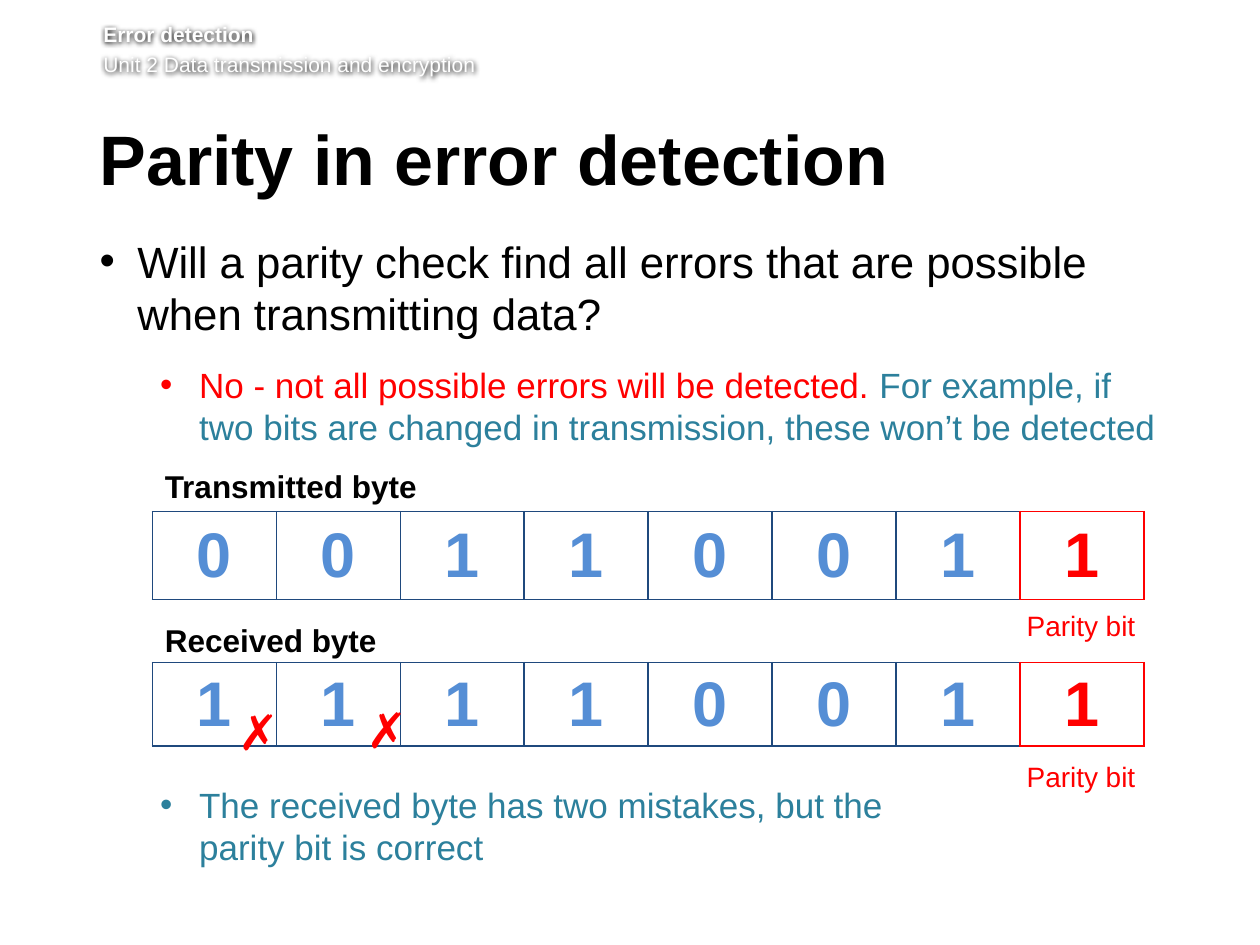
from lxml.etree import SubElement
from pptx import Presentation
from pptx.dml.color import RGBColor
from pptx.enum.text import MSO_ANCHOR, MSO_AUTO_SIZE, PP_ALIGN
from pptx.oxml import parse_xml
from pptx.oxml.ns import nsdecls, qn
from pptx.util import Inches, Pt

BLACK, WHITE, RED = "000000", "FFFFFF", "FF0000"
NAVY, BLUE, TEAL = "1F497D", "558ED5", "2C809C"


def color(hex_value):
    return RGBColor.from_string(hex_value)


def add_run(paragraph, text, size, hex_value, bold=False):
    for index, line in enumerate(text.split("\n")):
        if index:
            paragraph.add_line_break()
        run = paragraph.add_run()
        run.text = line
        run.font.color.rgb = color(hex_value)
        for name, value in {"name": "Arial", "size": Pt(size), "bold": bold}.items():
            setattr(run.font, name, value)


def format_paragraph(paragraph, **values):
    for name, value in values.items():
        setattr(paragraph, name, value)


def prepare_frame(frame, **margins):
    frame.word_wrap = True
    frame.auto_size = MSO_AUTO_SIZE.NONE
    frame.vertical_anchor = MSO_ANCHOR.TOP
    for side, value in margins.items():
        setattr(frame, f"margin_{side}", Inches(value))


def place(shape, *box):
    for name, value in zip(("left", "top", "width", "height"), box):
        setattr(shape, name, Inches(value))


def add_label(slide, text, box, size, hex_value, bold=False, align=PP_ALIGN.LEFT):
    label = slide.shapes.add_textbox(*map(Inches, box))
    prepare_frame(label.text_frame)
    paragraph = label.text_frame.paragraphs[0]
    paragraph.alignment = align
    add_run(paragraph, text, size, hex_value, bold)


def add_header(slide):
    header = slide.shapes.add_textbox(*map(Inches, (0.82, 0.17, 8.82, 0.49)))
    frame = header.text_frame
    prepare_frame(frame, left=0, top=0, right=0, bottom=0.05)
    add_run(frame.paragraphs[0], "Error detection", 12, WHITE, True)
    unit = frame.add_paragraph()
    unit.space_before = Pt(2.9)
    add_run(unit, "Unit 2 Data transmission and encryption", 12, WHITE)
    # Soft shadow that keeps the white text readable
    header._element.spPr.append(parse_xml(
        f'<a:effectLst {nsdecls("a")}><a:outerShdw blurRad="38100" dist="0" dir="0">'
        '<a:srgbClr val="000000"/></a:outerShdw></a:effectLst>'))


def add_bullet(paragraph, level, margin, hanging, runs, size, **spacing):
    format_paragraph(paragraph, level=level, line_spacing=Pt(size * 1.2), **spacing)
    props = paragraph._p.get_or_add_pPr()
    props.set("marL", str(Inches(margin)))
    props.set("indent", str(-Inches(hanging)))
    SubElement(props, qn("a:buFont"), typeface="Arial")
    SubElement(props, qn("a:buChar"), char="•")
    for text, hex_value in runs:
        add_run(paragraph, text, size, hex_value)


def set_borders(cell, left, right, top, bottom):
    props = cell._tc.get_or_add_tcPr()
    for index, (side, hex_value) in enumerate(zip("LRTB", (left, right, top, bottom))):
        props.insert(index, parse_xml(
            f'<a:ln{side} {nsdecls("a")} w="{Pt(1)}"><a:solidFill>'
            f'<a:srgbClr val="{hex_value}"/></a:solidFill></a:ln{side}>'))


def add_byte(slide, bits, top, height):
    frame = slide.shapes.add_table(1, len(bits), Inches(1.21), Inches(top),
                                   Inches(7.87), Inches(height))
    table = frame.table
    table.first_row = table.horz_banding = False
    parity = len(bits) - 1
    for index, bit in enumerate(bits):
        cell = table.cell(0, index)
        cell.fill.background()
        cell.vertical_anchor = MSO_ANCHOR.MIDDLE
        paragraph = cell.text_frame.paragraphs[0]
        paragraph.alignment = PP_ALIGN.CENTER
        add_run(paragraph, bit, 36, RED if index == parity else BLUE, True)
        edge = RED if index == parity else NAVY
        right = RED if index >= parity - 1 else NAVY
        set_borders(cell, edge, right, edge, edge)


def main():
    deck = Presentation()
    deck.slide_width, deck.slide_height = Inches(10), Inches(7.5)
    slide = deck.slides.add_slide(deck.slide_layouts[1])
    add_header(slide)

    # Title
    title = slide.shapes.title
    place(title, 0.79, 0.99, 8.55, 0.73)
    prepare_frame(title.text_frame, left=0, top=0.05, right=0.1, bottom=0.05)
    heading = title.text_frame.paragraphs[0]
    format_paragraph(heading, alignment=PP_ALIGN.LEFT, line_spacing=Pt(39))
    add_run(heading, "Parity in error detection", 40, BLACK, True)

    # Question, answer and conclusion; the conclusion stands below the bytes
    body = slide.placeholders[1]
    place(body, 0.79, 1.86, 8.53, 3.78)
    points = body.text_frame
    prepare_frame(points, left=0, top=0, right=0.1, bottom=0.05)
    add_bullet(points.paragraphs[0], 0, 0.3, 0.3,
               [("Will a parity check find all errors that are possible "
                 "when transmitting data?", BLACK)],
               25, space_before=Pt(0), space_after=Pt(14))
    add_bullet(points.add_paragraph(), 1, 0.79, 0.31,
               [("No - not all possible errors will be detected. ", RED),
                ("For example, if two bits are changed in transmission, "
                 "these won’t be detected", TEAL)],
               20, space_before=Pt(0), space_after=Pt(12))
    add_bullet(points.add_paragraph(), 1, 0.79, 0.31,
               [("The received byte has two mistakes, but the \nparity bit is correct",
                 TEAL)],
               20, space_before=Pt(180), space_after=Pt(12))

    # The two bytes with their captions
    for caption, caption_top, bits, top, height in (
            ("Transmitted byte", 3.66, "00110011", 4.06, 0.7),
            ("Received byte", 4.88, "11110011", 5.26, 0.66)):
        add_byte(slide, bits, top, height)
        add_label(slide, caption, (1.21, caption_top, 2.3, 0.4), 18, BLACK, True)
        add_label(slide, "Parity bit", (7.95, top + 0.72, 1.26, 0.37), 16, RED,
                  align=PP_ALIGN.CENTER)

    # Marks on the wrong bits
    for left, top in ((1.79, 5.52), (2.81, 5.5)):
        add_label(slide, "✗", (left, top, 1.72, 0.57), 28, RED)

    deck.save("out.pptx")


if __name__ == "__main__":
    main()
